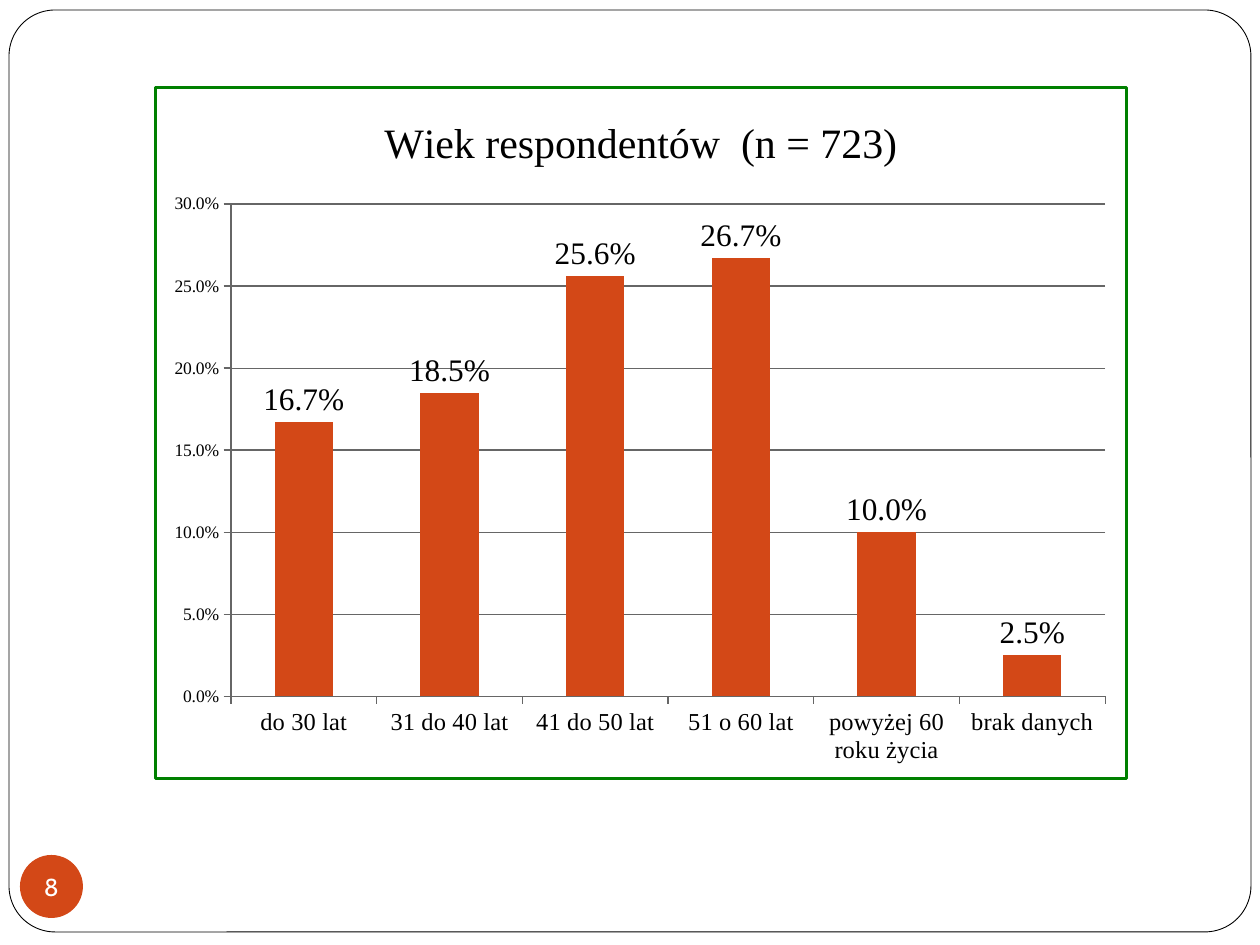
from lxml import etree
from pptx import Presentation, util as u
from pptx.chart.data import CategoryChartData
from pptx.dml.color import RGBColor
from pptx.enum import chart as ch, shapes, text
from pptx.oxml import parse_xml
from pptx.oxml.ns import nsdecls, qn

AGES = [
    ("do 30 lat", 0.167),
    ("31 do 40 lat", 0.185),
    ("41 do 50 lat", 0.256),
    ("51 o 60 lat", 0.267),
    ("powyżej 60 roku życia", 0.1),
    ("brak danych", 0.025),
]
TITLE = "Wiek respondentów  (n = 723)"
PAGE = "8"
HUES = {"paper": "FFFFFF", "ink": "000000", "bar": "D34817",
        "edge": "008000", "grid": "666666"}
SERIF, SANS = "Times New Roman", "Cabin"
FRAME = (9, 10, 1242, 922)
BADGE = (20, 855, 63, 63)
CHART = (154, 86, 974, 694)
PLOT = (230, 203, 877, 494)
PCT = "0.0%"


def px(n):
    return round(n * u.Inches(1) / 126)


def hue(name):
    return RGBColor.from_string(HUES[name])


def style(font, size, face, name="ink"):
    font.size, font.name, font.bold = u.Pt(size), face, False
    font.color.rgb = hue(name)


def add_shape(slide, kind, box, fill):
    shape = slide.shapes.add_shape(kind, *map(px, box))
    shape.shadow.inherit = False
    shape.fill.solid()
    shape.fill.fore_color.rgb = hue(fill)
    return shape


def add_badge(slide):
    badge = add_shape(slide, shapes.MSO_SHAPE.OVAL, BADGE, "bar")
    badge.line.fill.background()
    body = badge.text_frame
    body.margin_left = body.margin_right = 0
    body.margin_top = body.margin_bottom = 0
    body.word_wrap = False
    body.vertical_anchor = text.MSO_ANCHOR.MIDDLE
    para = body.paragraphs[0]
    para.alignment = text.PP_ALIGN.CENTER
    run = para.add_run()
    run.text = PAGE
    style(run.font, 14, SANS, "paper")


def frame_chart(chart):
    border = parse_xml(
        f'<c:spPr {nsdecls("c", "a")}><a:noFill/><a:ln w="{u.Pt(1.5)}"><a:solidFill>'
        f'<a:srgbClr val="{HUES["edge"]}"/></a:solidFill></a:ln></c:spPr>')
    chart.element.find(qn("c:chart")).addnext(border)


def place_plot(chart):
    area = chart.element.find(".//" + qn("c:plotArea"))
    for old in area.findall(qn("c:layout")):
        area.remove(old)
    layout = etree.Element(qn("c:layout"))
    manual = etree.SubElement(layout, qn("c:manualLayout"))
    left, top, wide, high = CHART
    x, y, w, h = PLOT
    parts = [("layoutTarget", "inner"), ("xMode", "edge"), ("yMode", "edge"),
             ("x", round((x - left) / wide, 3)), ("y", round((y - top) / high, 3)),
             ("w", round(w / wide, 3)), ("h", round(h / high, 3))]
    for tag, val in parts:
        etree.SubElement(manual, qn("c:" + tag)).set("val", str(val))
    area.insert(0, layout)


def add_chart(slide):
    data = CategoryChartData(number_format=PCT)
    data.categories = [age for age, share in AGES]
    data.add_series("Series 1", [share for age, share in AGES])
    chart = slide.shapes.add_chart(
        ch.XL_CHART_TYPE.COLUMN_CLUSTERED, *map(px, CHART), data).chart
    style(chart.font, 10, SERIF)
    chart.has_legend = False
    run = chart.chart_title.text_frame.paragraphs[0].add_run()
    run.text = TITLE
    style(run.font, 24, SERIF)
    chart.chart_title.include_in_layout = False

    for axis, size in ((chart.category_axis, 14), (chart.value_axis, 10)):
        style(axis.tick_labels.font, size, SERIF)
        axis.major_tick_mark = ch.XL_TICK_MARK.OUTSIDE
        axis.minor_tick_mark = ch.XL_TICK_MARK.NONE
        axis.format.line.color.rgb = hue("grid")
        axis.format.line.width = u.Pt(0.75)
    axis = chart.value_axis
    axis.minimum_scale, axis.maximum_scale, axis.major_unit = 0, 0.3, 0.05
    axis.tick_labels.number_format = PCT
    axis.tick_labels.number_format_is_linked = False
    axis.has_major_gridlines = True
    axis.major_gridlines.format.line.color.rgb = hue("grid")
    axis.major_gridlines.format.line.width = u.Pt(0.75)

    plot = chart.plots[0]
    plot.gap_width, plot.vary_by_categories = 150, False
    bars = plot.series[0]
    bars.format.fill.solid()
    bars.format.fill.fore_color.rgb = hue("bar")
    tags = bars.data_labels
    tags.show_value = True
    tags.number_format, tags.number_format_is_linked = PCT, False
    tags.position = ch.XL_LABEL_POSITION.OUTSIDE_END
    style(tags.font, 18, SERIF)
    frame_chart(chart)
    place_plot(chart)


def main():
    deck = Presentation()
    deck.slide_width, deck.slide_height = u.Inches(10), u.Inches(7.5)
    slide = deck.slides.add_slide(deck.slide_layouts[6])
    frame = add_shape(slide, shapes.MSO_SHAPE.ROUNDED_RECTANGLE, FRAME, "paper")
    frame.adjustments[0] = 0.05
    frame.line.color.rgb = hue("ink")
    frame.line.width = u.Pt(0.5)
    add_badge(slide)
    add_chart(slide)
    deck.save("out.pptx")


if __name__ == "__main__":
    main()
